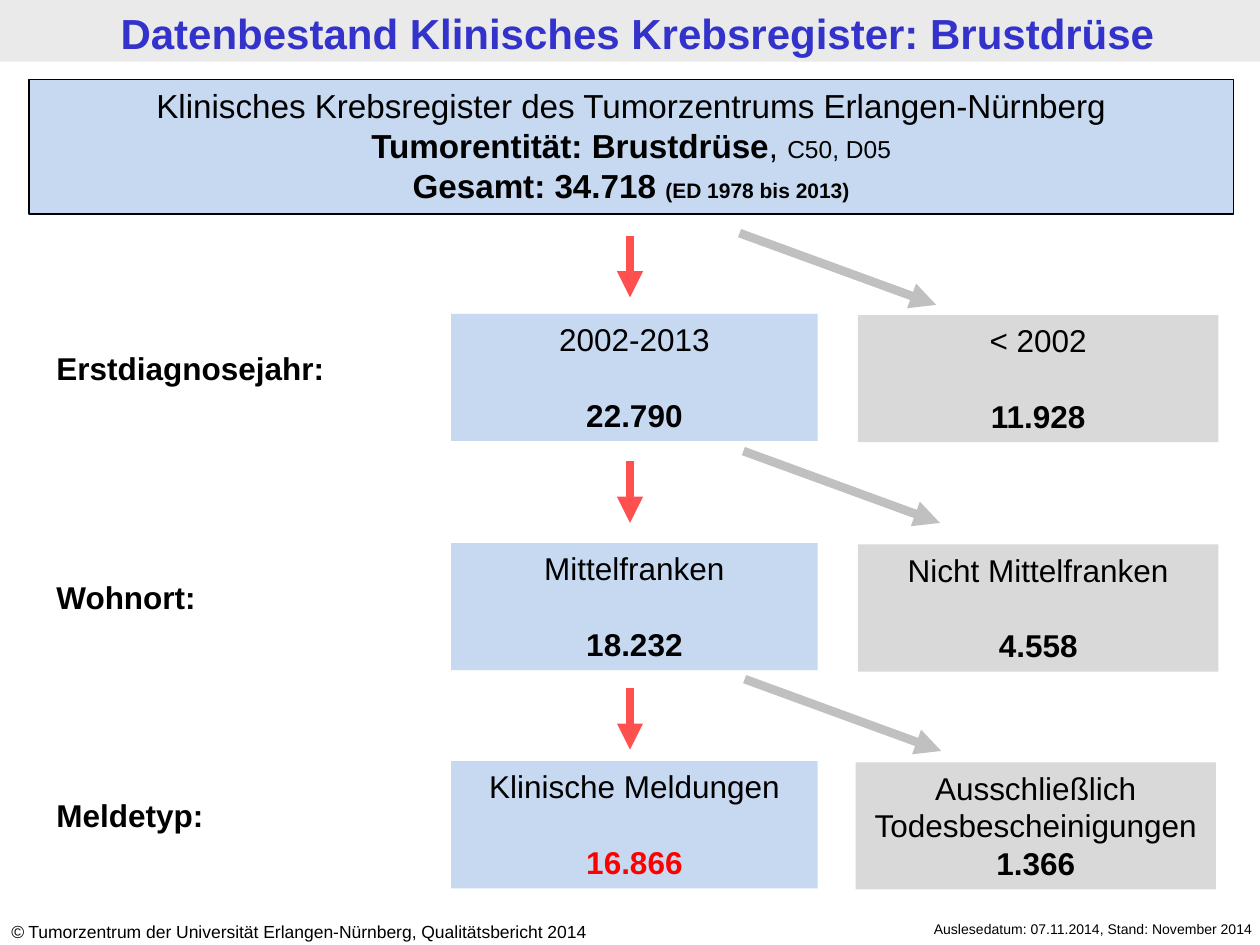
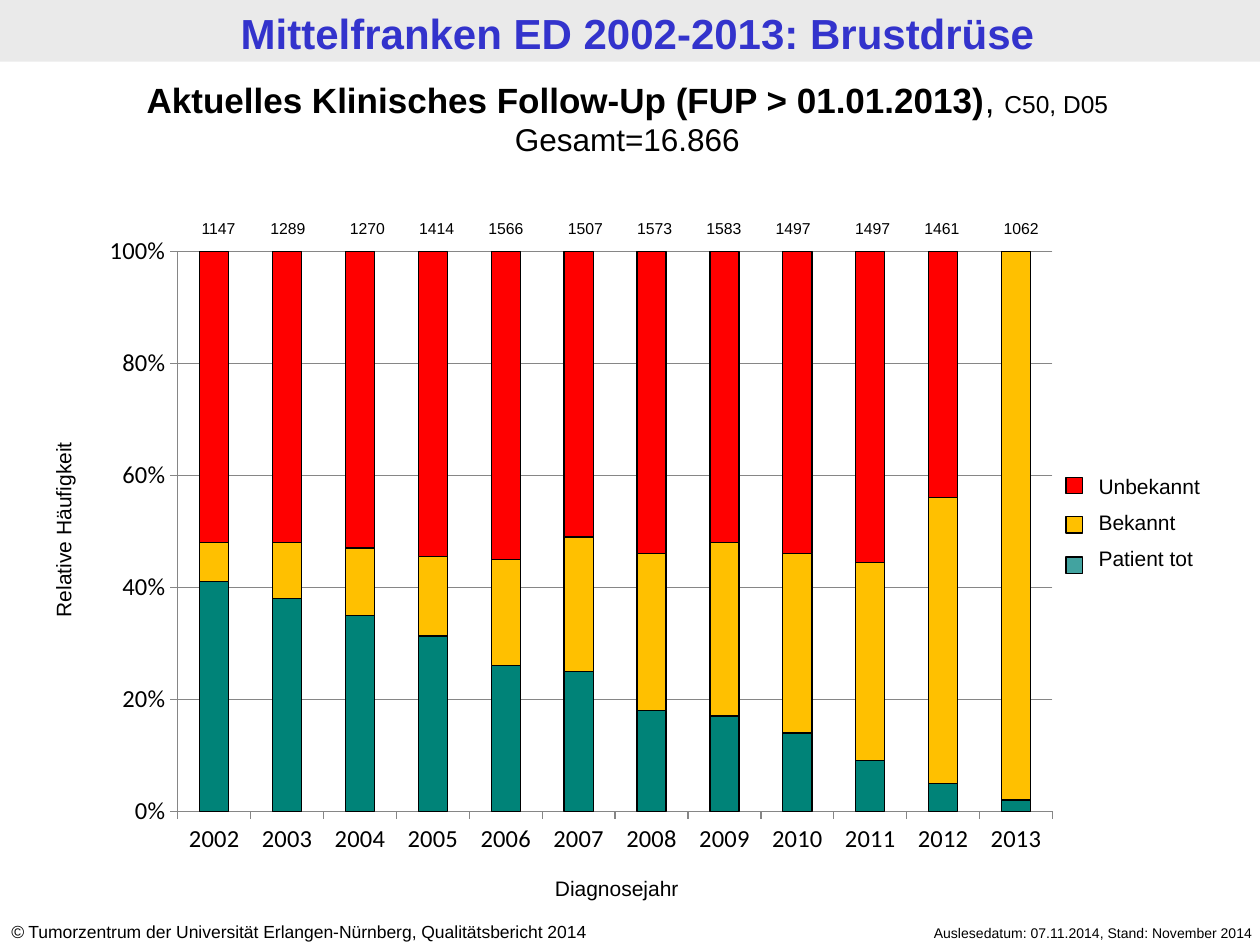
from dataclasses import dataclass

from lxml import etree
from pptx import Presentation
from pptx.chart.data import CategoryChartData
from pptx.dml.color import RGBColor
from pptx.enum.chart import XL_CHART_TYPE, XL_TICK_MARK
from pptx.enum.shapes import MSO_CONNECTOR, MSO_SHAPE
from pptx.enum.text import MSO_ANCHOR, PP_ALIGN
from pptx.oxml import parse_xml
from pptx.oxml.ns import nsdecls, qn
from pptx.util import Inches, Pt


@dataclass(frozen=True)
class Theme:
    """Colours, fonts and type sizes shared by the slides."""
    font: str = "Arial"
    chart_font: str = "Calibri"
    black: str = "000000"
    title: str = "3333CC"
    band: str = "EAEAEA"
    kept: str = "C6D9F1"
    dropped: str = "D9D9D9"
    kept_arrow: str = "FF5050"
    dropped_arrow: str = "C0C0C0"
    red: str = "FF0000"
    amber: str = "FFC000"
    teal: str = "008378"
    teal_key: str = "008380"
    grid: str = "868686"
    title_size: float = 24
    heading_size: float = 20
    entity_size: float = 19
    body_size: float = 18
    small_size: float = 14
    label_size: float = 12
    footer_size: float = 10
    count_size: float = 9
    date_size: float = 8
    outline: float = 0.75
    arrow: float = 5


T = Theme()


def rgb(color):
    """Return a colour object for a hex string."""
    return RGBColor.from_string(color)


def write(shape, paragraphs, size, align=PP_ALIGN.LEFT, color=T.black, bold=False, gap=0):
    """Fill a shape with paragraphs, each a string or a list of (text, run options)."""
    tf = shape.text_frame
    tf.word_wrap = True
    tf.vertical_anchor = MSO_ANCHOR.TOP
    for i, content in enumerate(paragraphs):
        p = tf.paragraphs[0] if i == 0 else tf.add_paragraph()
        p.alignment = align
        if i and gap:
            p.space_before = Pt(gap)
        p.font.name, p.font.size, p.font.bold = T.font, Pt(size), bold
        p.font.color.rgb = rgb(color)
        runs = [(content, {})] if isinstance(content, str) else content
        for text, options in runs:
            r = p.add_run()
            r.text = text
            if "size" in options:
                r.font.size = Pt(options["size"])
            if "bold" in options:
                r.font.bold = options["bold"]
            if "italic" in options:
                r.font.italic = options["italic"]
            if "color" in options:
                r.font.color.rgb = rgb(options["color"])


def add_text(slide, box, paragraphs, size, **style):
    """Add a text box and return it."""
    sp = slide.shapes.add_textbox(*map(Inches, box))
    write(sp, paragraphs, size, **style)
    return sp


def add_box(slide, box, fill, line=None):
    """Add a filled rectangle, outlined if a line colour is given."""
    sp = slide.shapes.add_shape(MSO_SHAPE.RECTANGLE, *map(Inches, box))
    sp.shadow.inherit = False
    sp.fill.solid()
    sp.fill.fore_color.rgb = rgb(fill)
    if line:
        sp.line.color.rgb = rgb(line)
        sp.line.width = Pt(T.outline)
    else:
        sp.line.fill.background()
    return sp


def add_arrow(slide, start, end, color):
    """Add a thick straight arrow."""
    cx = slide.shapes.add_connector(MSO_CONNECTOR.STRAIGHT, *map(Inches, start + end))
    cx.line.color.rgb = rgb(color)
    cx.line.width = Pt(T.arrow)
    etree.SubElement(cx.line._get_or_add_ln(), qn("a:tailEnd"), type="triangle")
    etree.SubElement(cx._element.spPr, qn("a:effectLst"))


def add_frame(prs, title, date_top):
    """Add a slide with title band, title and footers."""
    slide = prs.slides.add_slide(prs.slide_layouts[6])
    add_box(slide, (0, 0, 10, 0.49), T.band)
    add_text(slide, (0.06, 0.01, 10, 0.49), [title], T.title_size,
             align=PP_ALIGN.CENTER, color=T.title, bold=True)
    add_text(slide, (6.65, date_top, 3.39, 0.24),
             ["Auslesedatum: 07.11.2014, Stand: November 2014"], T.date_size,
             align=PP_ALIGN.RIGHT)
    add_text(slide, (-0.01, 7.26, 5.24, 0.27),
             [[("©", {"italic": True}),
               (" Tumorzentrum der Universität Erlangen-Nürnberg, Qualitätsbericht 2014", {})]],
             T.footer_size)
    return slide


def add_group_box(slide, box, fill, name, count, color=T.black, gap=0):
    """Add a box with the name and size of a patient group."""
    sp = add_box(slide, box, fill)
    write(sp, [name, [(count, {"bold": True, "color": color})]], T.body_size,
          align=PP_ALIGN.CENTER, gap=gap)


def add_selection_step(slide, top, label, kept, dropped, kept_color=T.black,
                       dropped_left=6.81, dropped_gap=21.7):
    """Add one row of the selection: label, kept group and dropped group."""
    add_text(slide, (0.35, top + 0.23, 2.76, 0.4), [label], T.body_size, bold=True)
    add_group_box(slide, (3.58, top, 2.91, 1.01), T.kept, *kept, color=kept_color, gap=21.7)
    add_group_box(slide, (dropped_left, top + 0.01, 2.86, 1.01), T.dropped, *dropped,
                  gap=dropped_gap)


def style_axis(axis):
    """Apply the shared axis look."""
    axis.major_tick_mark = XL_TICK_MARK.OUTSIDE
    axis.minor_tick_mark = XL_TICK_MARK.NONE
    axis.tick_labels.font.size = Pt(T.small_size)
    axis.format.line.color.rgb = rgb(T.grid)


def place_plot(chart, **fractions):
    """Fix the inner plot area as fractions of the chart."""
    modes = "".join(f'<c:{k}Mode val="edge"/>' for k in "xy")
    sizes = "".join(f'<c:{k} val="{v}"/>' for k, v in fractions.items())
    layout = parse_xml(f'<c:layout {nsdecls("c")}><c:manualLayout>'
                       f'<c:layoutTarget val="inner"/>{modes}{sizes}'
                       '</c:manualLayout></c:layout>')
    plot_area = chart._chartSpace.chart.plotArea
    for old in plot_area.findall(qn("c:layout")):
        plot_area.remove(old)
    plot_area.insert(0, layout)


def add_status_chart(slide, years, statuses):
    """Add the stacked 100 % column chart of follow-up status by year."""
    data = CategoryChartData()
    data.categories = years
    for name, values, _ in statuses:
        data.add_series(name, values)
    chart = slide.shapes.add_chart(XL_CHART_TYPE.COLUMN_STACKED_100,
                                   *map(Inches, (0.71, 1.79, 7.8, 5.11)), data).chart
    chart.has_legend = chart.has_title = False
    chart.font.name, chart.font.size = T.chart_font, Pt(T.body_size)
    chart.font.color.rgb = rgb(T.black)
    plot = chart.plots[0]
    plot.gap_width, plot.overlap, plot.vary_by_categories = 150, 100, False
    for series, (_, _, color) in zip(plot.series, statuses):
        series.format.fill.solid()
        series.format.fill.fore_color.rgb = rgb(color)
        series.format.line.color.rgb = rgb(T.black)
        series.format.line.width = Pt(T.outline)
    style_axis(chart.category_axis)
    axis = chart.value_axis
    style_axis(axis)
    axis.minimum_scale, axis.maximum_scale, axis.major_unit = 0, 1, 0.2
    axis.tick_labels.number_format = "0%"
    axis.tick_labels.number_format_is_linked = False
    axis.major_gridlines.format.line.color.rgb = rgb(T.grid)
    place_plot(chart, x=0.09, y=0.04, w=0.89, h=0.87)


def add_legend(slide):
    """Add the legend names and colour keys."""
    add_text(slide, (8.62, 3.71, 1.42, 0.91), ["Unbekannt", "Bekannt", "Patient tot"],
             T.label_size, gap=6)
    for top, color in ((3.79, T.red), (4.1, T.amber), (4.42, T.teal_key)):
        key = add_box(slide, (8.46, top, 0.13, 0.13), color, T.black)
        if color == T.teal_key:
            fill = key.fill._xPr.find(qn("a:solidFill"))
            etree.SubElement(fill[0], qn("a:alpha"), val="74000")


def build_selection(prs):
    """Build the slide on how the patients were selected."""
    slide = add_frame(prs, "Datenbestand Klinisches Krebsregister: Brustdrüse", 7.26)
    register = add_box(slide, (0.23, 0.63, 9.56, 1.07), T.kept, T.black)
    write(register, [
        "Klinisches Krebsregister des Tumorzentrums Erlangen-Nürnberg",
        [("Tumorentität: Brustdrüse", {"bold": True}), (", ", {}),
         ("C50, D05", {"size": T.small_size})],
        [("Gesamt: 34.718 ", {"bold": True}),
         ("(ED 1978 bis 2013)", {"bold": True, "size": T.label_size})],
    ], T.entity_size, align=PP_ALIGN.CENTER)
    add_selection_step(slide, 2.49, "Erstdiagnosejahr:", ("2002-2013", "22.790"),
                       ("< 2002", "11.928"))
    add_selection_step(slide, 4.31, "Wohnort:", ("Mittelfranken", "18.232"),
                       ("Nicht Mittelfranken", "4.558"))
    add_selection_step(slide, 6.04, "Meldetyp:", ("Klinische Meldungen", "16.866"),
                       ("Ausschließlich Todesbescheinigungen", "1.366"),
                       kept_color=T.red, dropped_left=6.79, dropped_gap=0)
    for top in (1.87, 3.66, 5.46):
        add_arrow(slide, (5, top), (5, top + 0.49), T.kept_arrow)
    for left, top in ((5.87, 1.85), (5.9, 3.58), (5.91, 5.39)):
        add_arrow(slide, (left, top), (left + 1.56, top + 0.57), T.dropped_arrow)


def build_follow_up(prs):
    """Build the slide on follow-up status by year of diagnosis."""
    slide = add_frame(prs, "Mittelfranken ED 2002-2013: Brustdrüse", 7.29)
    add_text(slide, (-0.04, 0.57, 10.04, 0.74), [
        [("Aktuelles Klinisches Follow-Up (FUP > 01.01.2013)", {"bold": True}), (", ", {}),
         ("C50, D05", {"size": T.small_size})],
        [("Gesamt=16.866", {"size": T.body_size})],
    ], T.heading_size, align=PP_ALIGN.CENTER)
    add_status_chart(slide, [str(year) for year in range(2002, 2014)], [
        ("Patient tot", (41, 38, 35, 31, 26, 25, 18, 17, 14, 9, 5, 2), T.teal),
        ("Bekannt", (7, 10, 12, 14, 19, 24, 28, 31, 32, 35, 51, 98), T.amber),
        ("Unbekannt", (52, 52, 53, 54, 55, 51, 54, 52, 54, 55, 44, None), T.red),
    ])
    add_legend(slide)
    axis_title = add_text(slide, (-0.7, 4.05, 2.41, 0.31), ["Relative Häufigkeit"],
                          T.label_size, align=PP_ALIGN.CENTER)
    axis_title.rotation = 270
    add_text(slide, (3.77, 6.9, 2.25, 0.31), ["Diagnosejahr"], T.label_size,
             align=PP_ALIGN.CENTER)
    counts = ((1.46, 1147), (2.01, 1289), (2.64, 1270), (3.19, 1414), (3.74, 1566),
              (4.37, 1507), (4.92, 1573), (5.47, 1583), (6.02, 1497), (6.65, 1497),
              (7.2, 1461), (7.83, 1062))
    for left, count in counts:
        add_text(slide, (left, 1.69, 0.55, 0.25), [str(count)], T.count_size,
                 align=PP_ALIGN.CENTER)


def main():
    """Build and save the presentation."""
    prs = Presentation()
    prs.slide_width, prs.slide_height = Inches(10), Inches(7.5)
    build_selection(prs)
    build_follow_up(prs)
    prs.save("out.pptx")


if __name__ == "__main__":
    main()
